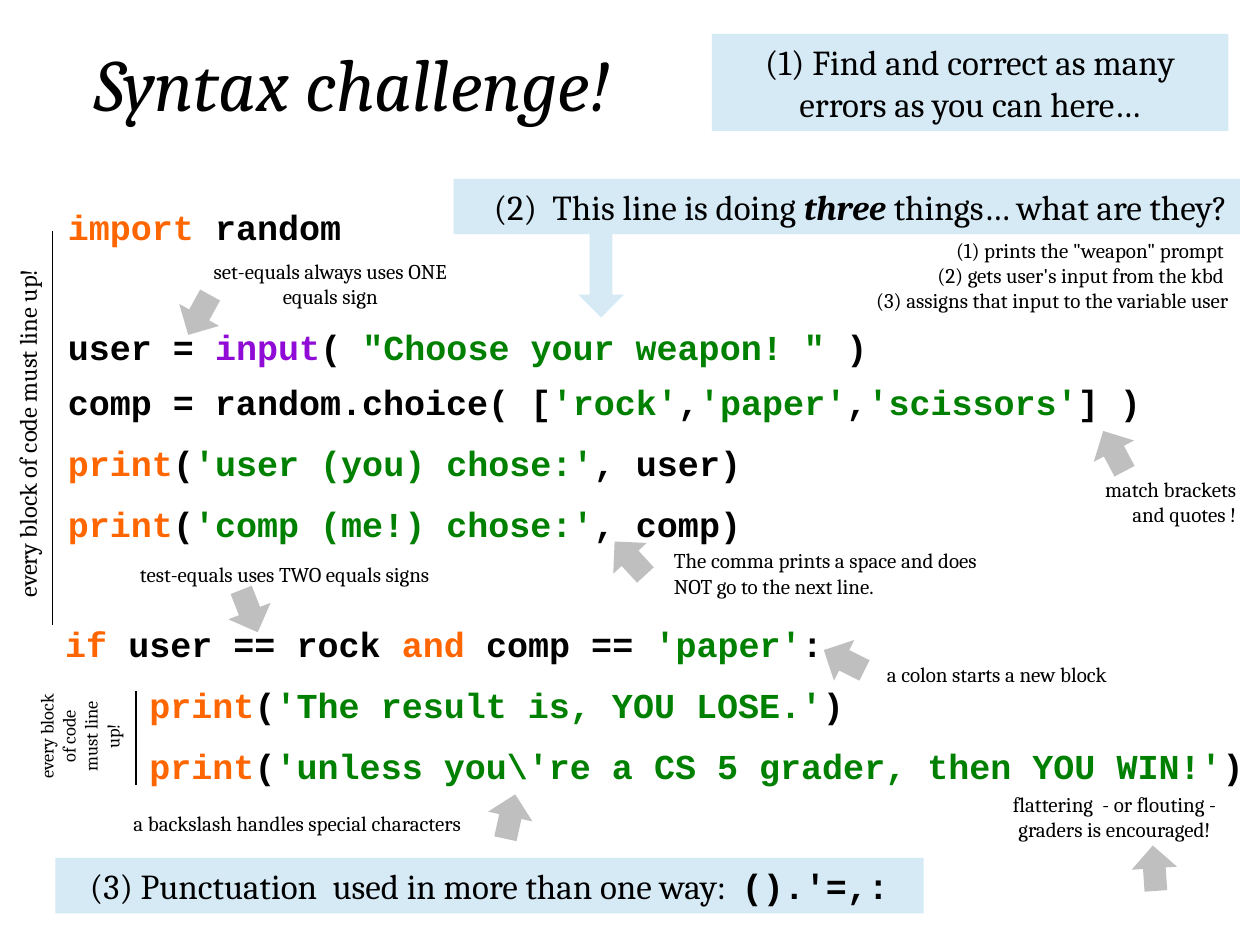
from dataclasses import dataclass
from typing import Optional

import pptx
import pptx.dml.color
import pptx.enum.shapes
import pptx.enum.text
import pptx.oxml.ns
import pptx.util
from lxml import etree

Pt = pptx.util.Pt
Align = pptx.enum.text.PP_ALIGN
Geometry = pptx.enum.shapes.MSO_SHAPE

SERIF, MONO = "Cambria", "Courier New"
BLACK, WHITE, PALE_BLUE, GREY = "000000", "FFFFFF", "D6EAF6", "BFBFBF"
KEYWORD, BUILTIN, STRING = "FF6600", "900BD5", "008000"
CODE_GAP = 11
LEFT, CENTER, RIGHT = Align.LEFT, Align.CENTER, Align.RIGHT


@dataclass
class Span:
    text: str
    color: Optional[str] = None
    font: Optional[str] = None
    bold: Optional[bool] = None
    italic: Optional[bool] = None


@dataclass
class Box:
    """A block of text; all lengths are in points."""
    left: float
    top: float
    width: float
    height: float
    lines: list[list[Span]]
    size: float = 12
    align: Align = LEFT
    font: str = SERIF
    bold: bool = False
    italic: bool = False
    fill: Optional[str] = None
    rotation: float = 0
    wrap: bool = True
    gap: float = 0


@dataclass
class Arrow:
    left: float
    top: float
    rotation: float = 0
    width: float = 26
    height: float = 26
    color: str = GREY


@dataclass
class Rule:
    x: float
    top: float
    bottom: float


def rgb(color: str) -> pptx.dml.color.RGBColor:
    return pptx.dml.color.RGBColor.from_string(color)


def plain(*texts: str) -> list[list[Span]]:
    return [[Span(text)] for text in texts]


def code(left: float, top: float, width: float, height: float, *lines: list[Span]) -> Box:
    return Box(left, top, width, height, list(lines), 20, font=MONO, bold=True, gap=CODE_GAP)


def print_line(text: str, rest: str = ")", indent: str = "") -> list[Span]:
    return [Span(indent + "print", KEYWORD), Span("(", BLACK),
            Span(text, STRING), Span(rest, BLACK)]


def draw_box(page, box: Box) -> None:
    place = [Pt(v) for v in (box.left, box.top, box.width, box.height)]
    if box.fill:
        shape = page.shapes.add_shape(Geometry.RECTANGLE, *place)
        shape.shadow.inherit = False
        shape.fill.solid()
        shape.fill.fore_color.rgb = rgb(box.fill)
        shape.line.fill.background()
    else:
        shape = page.shapes.add_textbox(*place)
    shape.rotation = box.rotation
    frame = shape.text_frame
    frame.word_wrap = box.wrap
    frame.auto_size = pptx.enum.text.MSO_AUTO_SIZE.SHAPE_TO_FIT_TEXT
    for index, line in enumerate(box.lines):
        para = frame.add_paragraph() if index else frame.paragraphs[0]
        para.alignment = box.align
        if index and box.gap:
            para.space_before = Pt(box.gap)
        para.font.size = Pt(box.size)
        para.font.name = box.font
        para.font.bold = box.bold
        para.font.italic = box.italic
        para.font.color.rgb = rgb(BLACK)
        for span in line:
            run = para.add_run()
            run.text = span.text
            if span.color:
                run.font.color.rgb = rgb(span.color)
            if span.font:
                run.font.name = span.font
            run.font.bold = span.bold
            run.font.italic = span.italic


def draw_arrow(page, arrow: Arrow) -> None:
    shape = page.shapes.add_shape(Geometry.DOWN_ARROW, Pt(arrow.left), Pt(arrow.top),
                                  Pt(arrow.width), Pt(arrow.height))
    shape.shadow.inherit = False
    shape.rotation = arrow.rotation
    shape.fill.solid()
    shape.fill.fore_color.rgb = rgb(arrow.color)
    shape.line.fill.background()


def draw_rule(page, rule: Rule) -> None:
    line = page.shapes.add_connector(pptx.enum.shapes.MSO_CONNECTOR.STRAIGHT,
                                     Pt(rule.x), Pt(rule.bottom), Pt(rule.x), Pt(rule.top))
    line.line.color.rgb = rgb(BLACK)
    line.line.width = Pt(0.75)
    etree.SubElement(line._element.spPr, pptx.oxml.ns.qn("a:effectLst"))


INDENT = " " * 4
BLOCK_NOTE = "every block of code must line up!"

# Program listing
PROGRAM = [
    code(31.7, 113.8, 174, 31.7, [Span("import", KEYWORD), Span(" random", BLACK)]),
    code(31.7, 182.2, 648, 31.7,
         [Span("user = ", BLACK), Span("input", BUILTIN), Span("( ", BLACK),
          Span('"Choose your weapon! " ', STRING), Span(")", BLACK)]),
    code(31.7, 213.8, 664.6, 104.4,
         [Span("comp = random.choice( [", BLACK), Span("'rock'", STRING), Span(",", BLACK),
          Span("'paper'", STRING), Span(",", BLACK), Span("'scissors'", STRING),
          Span("] )", BLACK)],
         print_line("'user (you) chose:'", ", user)"),
         print_line("'comp (me!) chose:'", ", comp)")),
    code(30.2, 352.1, 689.8, 104.4,
         [Span("if ", KEYWORD), Span("user == rock ", BLACK), Span("and ", KEYWORD),
          Span("comp == ", BLACK), Span("'paper'", STRING), Span(":", BLACK)],
         print_line("'The result is, YOU LOSE.'", indent=INDENT),
         print_line("'unless you\\'re a CS 5 grader, then YOU WIN!'", indent=INDENT)),
]

# Notes beside the code
NOTES = [
    Box(475.9, 131.8, 233.3, 51.1,
        plain('(1) prints the "weapon" prompt ', "(2) gets user's input from the kbd ",
              "(3) assigns that input to the variable user"), align=RIGHT, fill=WHITE),
    Box(-92.2, 228.2, 216, 24.5, plain(BLOCK_NOTE), 14, rotation=270, wrap=False),
    Box(13.7, 391.7, 64.1, 58.3, plain(BLOCK_NOTE), 10.5, CENTER, rotation=270),
    Box(64.1, 459.4, 211.7, 21.6, plain("a backslash handles special characters"),
        align=CENTER, wrap=False),
    Box(563.8, 448.6, 146.2, 36, plain("flattering  - or flouting - graders is encouraged!"),
        align=CENTER),
    Box(64.1, 317.5, 197.3, 21.6, plain("test-equals uses TWO equals signs"), align=CENTER),
    Box(499.7, 374.4, 154.1, 21.6, plain("a colon starts a new block")),
    Box(378, 309.6, 193, 36,
        plain("The comma prints a space and does NOT go to the next line.")),
    Box(113.8, 144, 149.8, 36, plain("set-equals always uses ONE equals sign"), align=CENTER),
    Box(606.2, 268.6, 107.3, 36, plain("match brackets and quotes !"), align=RIGHT),
]

RULES = [Rule(30.2, 131.8, 357.1), Rule(77.8, 394.6, 448.6)]

ARROWS = [
    Arrow(330.5, 129.6, height=51.8, color=PALE_BLUE),
    Arrow(278.6, 453.6, 192.4),
    Arrow(100.8, 167, 28.8),
    Arrow(129.6, 336.2, 338.6),
    Arrow(469.4, 364.3, 116.6),
    Arrow(347, 306, 137.4),
    Arrow(623.5, 244.8, 152.1),
    Arrow(646.6, 483.1, 176.1),
]

# Title and the three tasks
HEADINGS = [
    Box(12.2, 18, 378, 58.3, plain("Syntax challenge!"), 42, CENTER, italic=True),
    Box(406.8, 19.4, 295.2, 55.4,
        plain("(1) Find and correct as many errors as you can here…"), 20, CENTER,
        fill=PALE_BLUE),
    Box(259.2, 102.2, 449.3, 31.7,
        [[Span("(2)  This line is doing "), Span("three", bold=True, italic=True),
          Span(" things… what are they?")]], 20, RIGHT, fill=PALE_BLUE, wrap=False),
    Box(31.7, 490.3, 496.1, 31.7,
        [[Span("(3) Punctuation  used in more than one way:  "),
          Span("().'=,:", font=MONO, bold=True)]], 20, CENTER, fill=PALE_BLUE),
]


def main() -> None:
    deck = pptx.Presentation()
    deck.slide_width, deck.slide_height = Pt(720), Pt(540)
    page = deck.slides.add_slide(deck.slide_layouts[6])
    for draw, items in ((draw_box, PROGRAM + NOTES), (draw_rule, RULES),
                        (draw_arrow, ARROWS), (draw_box, HEADINGS)):
        for item in items:
            draw(page, item)
    deck.save("out.pptx")


if __name__ == "__main__":
    main()
